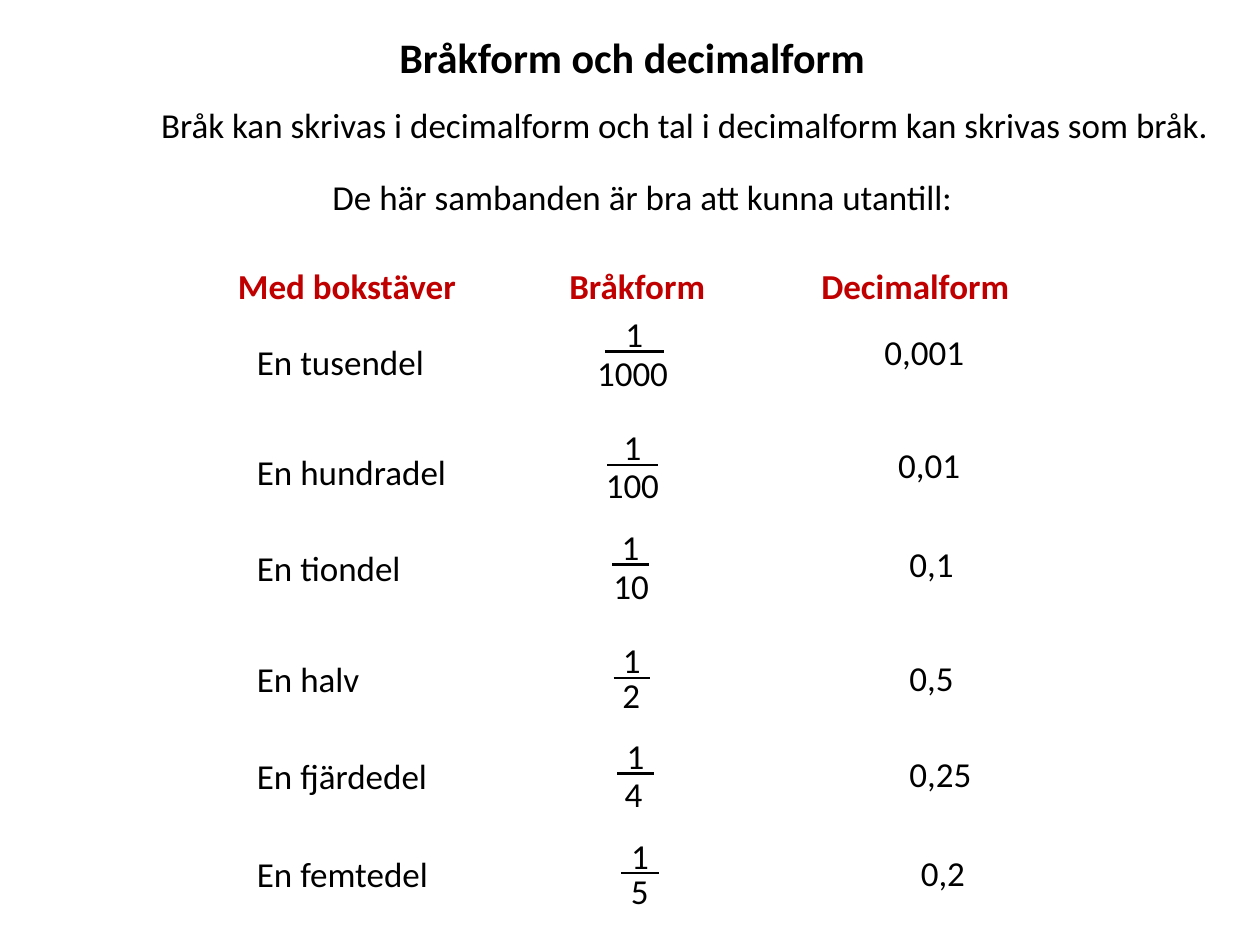
from dataclasses import dataclass

from lxml import etree
from pptx import Presentation
from pptx import util as u
from pptx.dml.color import RGBColor
from pptx.enum import shapes, text
from pptx.oxml import ns

COLORS = {"text": "000000", "heading": "C00000"}
FONT = "Calibri"
BODY = {"size": u.Pt(20), "bold": False}
HEADING = {"size": u.Pt(20), "bold": True}
TITLE = {"size": u.Pt(24), "bold": True}
LINE_HEIGHT = 0.44
NAME_LEFT = 1.94


@dataclass
class Row:
    name: str
    name_top: float
    denominator: str
    denominator_left: float
    denominator_top: float
    denominator_width: float
    bar_left: float
    bar_right: float
    bar_y: float
    decimal: str
    decimal_left: float
    decimal_width: float = 0.76


ROWS = [
    Row("En tusendel", 2.65, "1000", 4.64, 2.74, 0.81, 4.8, 5.27, 2.79, "0,001", 6.92, 0.98),
    Row("En hundradel", 3.53, "100", 4.71, 3.63, 0.76, 4.82, 5.22, 3.69, "0,01", 7.03),
    Row("En tiondel", 4.29, "10", 4.77, 4.43, 0.55, 4.86, 5.15, 4.48, "0,1", 7.12),
    Row("En halv", 5.17, "2", 4.84, 5.3, 0.31, 4.87, 5.16, 5.38, "0,5", 7.12),
    Row("En fjärdedel", 5.94, "4", 4.86, 6.08, 0.46, 4.9, 5.19, 6.14, "0,25", 7.12),
    Row("En femtedel", 6.72, "5", 4.91, 6.85, 0.36, 4.93, 5.23, 6.93, "0,2", 7.21),
]


def set_attributes(target, values):
    for name, value in values.items():
        setattr(target, name, value)


def write_text(shape, wording, style, color="text"):
    frame = shape.text_frame
    set_attributes(frame, {
        "text": wording,
        "word_wrap": True,
        "auto_size": text.MSO_AUTO_SIZE.SHAPE_TO_FIT_TEXT,
        "vertical_anchor": text.MSO_ANCHOR.TOP,
    })
    paragraph = frame.paragraphs[0]
    paragraph.alignment = text.PP_ALIGN.LEFT
    font = paragraph.runs[0].font
    set_attributes(font, {"name": FONT, **style})
    font.color.rgb = RGBColor.from_string(COLORS[color])
    return paragraph


def add_text(container, wording, left, top, width, style=BODY, color="text"):
    box = container.add_textbox(
        u.Inches(left), u.Inches(top), u.Inches(width), u.Inches(LINE_HEIGHT))
    return write_text(box, wording, style, color)


def add_title(slide, wording):
    title = slide.shapes.title
    set_attributes(title, {
        "left": u.Inches(0.27), "top": u.Inches(0.2),
        "width": u.Inches(9.73), "height": u.Inches(0.5),
    })
    write_text(title, wording, TITLE)
    title.text_frame.margin_left = u.Inches(2.9)


def add_headings(slide, headings, tab_positions):
    """Put the column headings on one line, spaced by tab stops."""
    paragraph = add_text(slide.shapes, "\t".join(headings), 1.79, 2.05, 6.7,
                         HEADING, "heading")
    properties = paragraph._p.get_or_add_pPr()
    tabs = etree.SubElement(properties, ns.qn("a:tabLst"))
    for position in tab_positions:
        etree.SubElement(tabs, ns.qn("a:tab"), pos=str(u.Inches(position)), algn="l")


def add_bar(container, left, right, y):
    bar = container.add_connector(
        shapes.MSO_CONNECTOR.STRAIGHT,
        u.Inches(left), u.Inches(y), u.Inches(right), u.Inches(y))
    bar.line.width = u.Pt(1.5)
    bar.line.color.rgb = RGBColor.from_string(COLORS["text"])
    etree.SubElement(bar._element.spPr, ns.qn("a:effectLst"))


def add_fraction(slide, row):
    group = slide.shapes.add_group_shape().shapes
    center = (row.bar_left + row.bar_right) / 2
    add_text(group, "1", center - 0.17, row.bar_y - 0.36, 0.51)
    add_text(group, row.denominator, row.denominator_left,
             row.denominator_top, row.denominator_width)
    add_bar(group, row.bar_left, row.bar_right, row.bar_y)


def add_row(slide, row):
    add_text(slide.shapes, row.name, NAME_LEFT, row.name_top, 1.82)
    add_fraction(slide, row)
    add_text(slide.shapes, row.decimal, row.decimal_left,
             row.bar_y - 0.22, row.decimal_width)


def main():
    presentation = Presentation()
    presentation.slide_width = u.Inches(10)
    presentation.slide_height = u.Inches(7.5)
    slide = presentation.slides.add_slide(
        presentation.slide_layouts.get_by_name("Title Only"))

    add_title(slide, "Bråkform och decimalform")
    add_text(slide.shapes,
             "Bråk kan skrivas i decimalform och tal i decimalform kan skrivas som bråk.",
             1.18, 0.77, 8.54)
    add_text(slide.shapes, "De här sambanden är bra att kunna utantill:",
             2.54, 1.34, 5.34)
    add_headings(slide, ["Med bokstäver", "Bråkform", "Decimalform"], [2.63, 4.63])
    for row in ROWS:
        add_row(slide, row)

    presentation.save("out.pptx")


if __name__ == "__main__":
    main()
